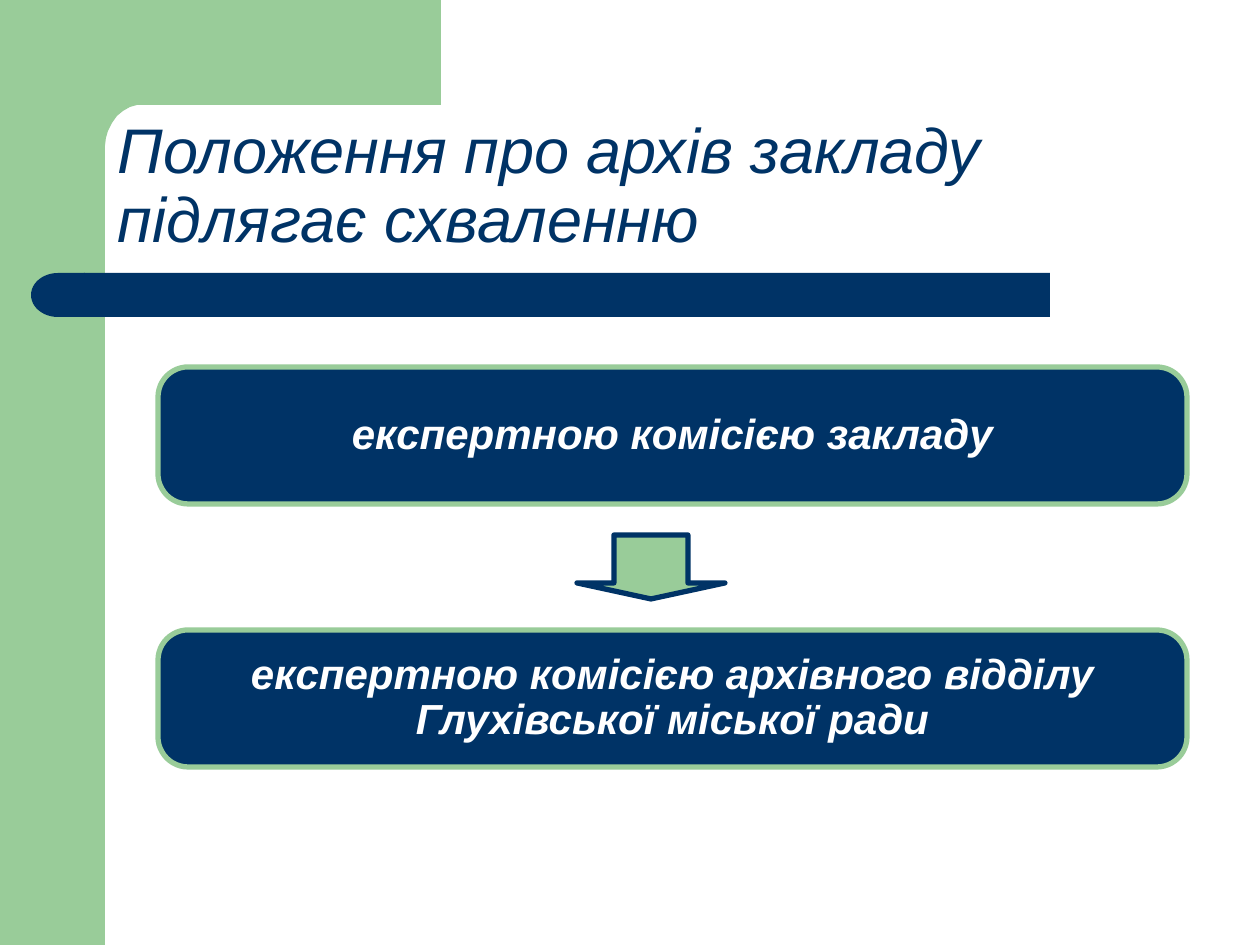
from pptx import Presentation
from pptx.dml.color import RGBColor
from pptx.enum.shapes import MSO_SHAPE
from pptx.enum.text import MSO_ANCHOR, PP_ALIGN
from pptx.util import Pt

PX = 914400 // 126
GREEN = RGBColor(0x99, 0xCC, 0x99)
NAVY = RGBColor(0x00, 0x33, 0x66)
WHITE = RGBColor(0xFF, 0xFF, 0xFF)

deck = Presentation()
deck.slide_width, deck.slide_height = 1260 * PX, 945 * PX
slide = deck.slides.add_slide(deck.slide_layouts[5])
shapes = slide.shapes


def paint(shape, fill, line=None):
    shape.shadow.inherit = False
    shape.fill.solid()
    shape.fill.fore_color.rgb = fill
    if line is None:
        shape.line.fill.background()
    else:
        shape.line.color.rgb = line
        shape.line.width = Pt(3)


def write(shape, text, anchor, align, style):
    frame = shape.text_frame
    frame.word_wrap = True
    frame.vertical_anchor = anchor
    frame.text = text
    para = frame.paragraphs[0]
    para.alignment = align
    para.line_spacing = 0.9
    font = para.runs[0].font
    font.color.rgb = style["color"]
    for key, value in style["font"].items():
        setattr(font, key, value)


corner = [(441, 0), (441, 105), (146, 105), (137, 105), (130, 107), (123, 111),
          (117, 116), (112, 123), (108, 131), (106, 138), (105, 146),
          (105, 161), (63, 161), (63, 0)]
pen = shapes.build_freeform(*corner[0], scale=PX)
pen.add_line_segments(corner[1:], close=True)
paint(pen.convert_to_shape(), GREEN)

parts = [
    (MSO_SHAPE.RECTANGLE, (0, 0, 105, 945), GREEN, None, 0),
    (MSO_SHAPE.RECTANGLE, (84, 273, 966, 44), NAVY, None, 0),
    (MSO_SHAPE.FLOWCHART_DELAY, (31, 273, 54, 44), NAVY, None, 180),
    (MSO_SHAPE.DOWN_ARROW, (577, 535, 148, 64), GREEN, NAVY, 0),
]
for kind, place, fill, line, turn in parts:
    part = shapes.add_shape(kind, *[n * PX for n in place])
    part.rotation = turn
    paint(part, fill, line)
part.adjustments[0], part.adjustments[1] = 0.5, 0.25

title = shapes.title
place = {"left": 105, "top": 105, "width": 1092, "height": 157}
for key, value in place.items():
    setattr(title, key, value * PX)
head = {"color": NAVY, "font": {"name": "Arial", "size": Pt(36), "italic": True}}
write(title, "Положення про архів закладу підлягає схваленню",
      MSO_ANCHOR.BOTTOM, PP_ALIGN.LEFT, head)

label = {"color": WHITE,
         "font": {"name": "Arial", "size": Pt(24), "bold": True, "italic": True}}
steps = ["експертною комісією закладу",
         "експертною комісією архівного відділу Глухівської міської ради"]
for i, text in enumerate(steps):
    box = shapes.add_shape(MSO_SHAPE.ROUNDED_RECTANGLE, 158 * PX,
                           (367 + 263 * i) * PX, 1029 * PX, 137 * PX)
    box.adjustments[0] = 0.22
    paint(box, NAVY, GREEN)
    write(box, text, MSO_ANCHOR.MIDDLE, PP_ALIGN.CENTER, label)

deck.save("out.pptx")
